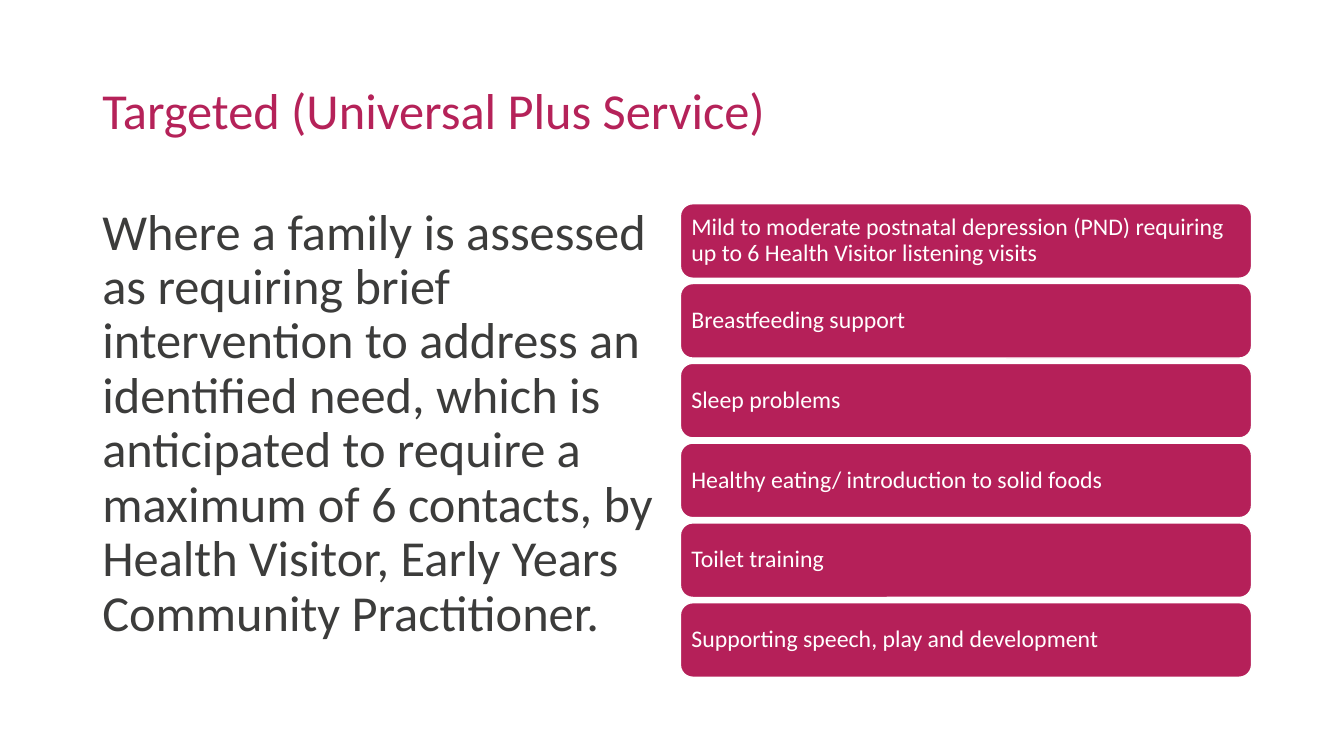
from pptx import Presentation
from pptx.dml.color import RGBColor
from pptx.enum.shapes import MSO_SHAPE
from pptx.enum.text import MSO_ANCHOR, PP_ALIGN
from pptx.util import Pt

PX = 9525
ROSE = RGBColor(0xB5, 0x22, 0x59)
BERRY = RGBColor(0xB5, 0x20, 0x59)
GREY = RGBColor(0x3C, 0x3C, 0x3B)
WHITE = RGBColor(0xFF, 0xFF, 0xFF)


def scale(*sizes):
    return [size * PX for size in sizes]


def write(shape, text, size, color, frame_style):
    frame = shape.text_frame
    for name, value in frame_style.items():
        setattr(frame, name, value)
    line = frame.paragraphs[0]
    line.text = text
    line.alignment = PP_ALIGN.LEFT
    line.line_spacing = 0.9
    font = line.runs[0].font
    font.color.rgb = color
    for name, value in {"name": "Calibri", "size": Pt(size)}.items():
        setattr(font, name, value)


deck = Presentation()
deck.slide_width, deck.slide_height = scale(1280, 720)
slide = deck.slides.add_slide(deck.slide_layouts[6])

title = slide.shapes.add_textbox(*scale(88, 38, 895, 139))
write(title, "Targeted (Universal Plus Service)", 36, ROSE,
      {"word_wrap": True, "vertical_anchor": MSO_ANCHOR.MIDDLE})

body = slide.shapes.add_textbox(*scale(88, 192, 544, 457))
write(body, "Where a family is assessed as requiring brief intervention to address "
      "an identified need, which is anticipated to require a maximum of 6 contacts, "
      "by Health Visitor, Early Years Community Practitioner.", 36, GREY,
      {"word_wrap": True, "vertical_anchor": MSO_ANCHOR.TOP})

needs = [
    "Mild to moderate postnatal depression (PND) requiring up to 6 Health Visitor listening visits",
    "Breastfeeding support",
    "Sleep problems",
    "Healthy eating/ introduction to solid foods",
    "Toilet training",
    "Supporting speech, play and development",
]
inset = 7 * PX
bar_style = {
    "word_wrap": True,
    "vertical_anchor": MSO_ANCHOR.MIDDLE,
    "margin_left": inset,
    "margin_right": inset,
    "margin_top": inset,
    "margin_bottom": inset,
}
for row, need in enumerate(needs):
    bar = slide.shapes.add_shape(MSO_SHAPE.ROUNDED_RECTANGLE,
                                 *scale(648, 194 + 76 * row, 544, 71))
    bar.shadow.inherit = False
    bar.fill.solid()
    bar.fill.fore_color.rgb = BERRY
    bar.line.color.rgb = WHITE
    bar.line.width = Pt(1)
    write(bar, need, 17, WHITE, bar_style)

deck.save("out.pptx")
